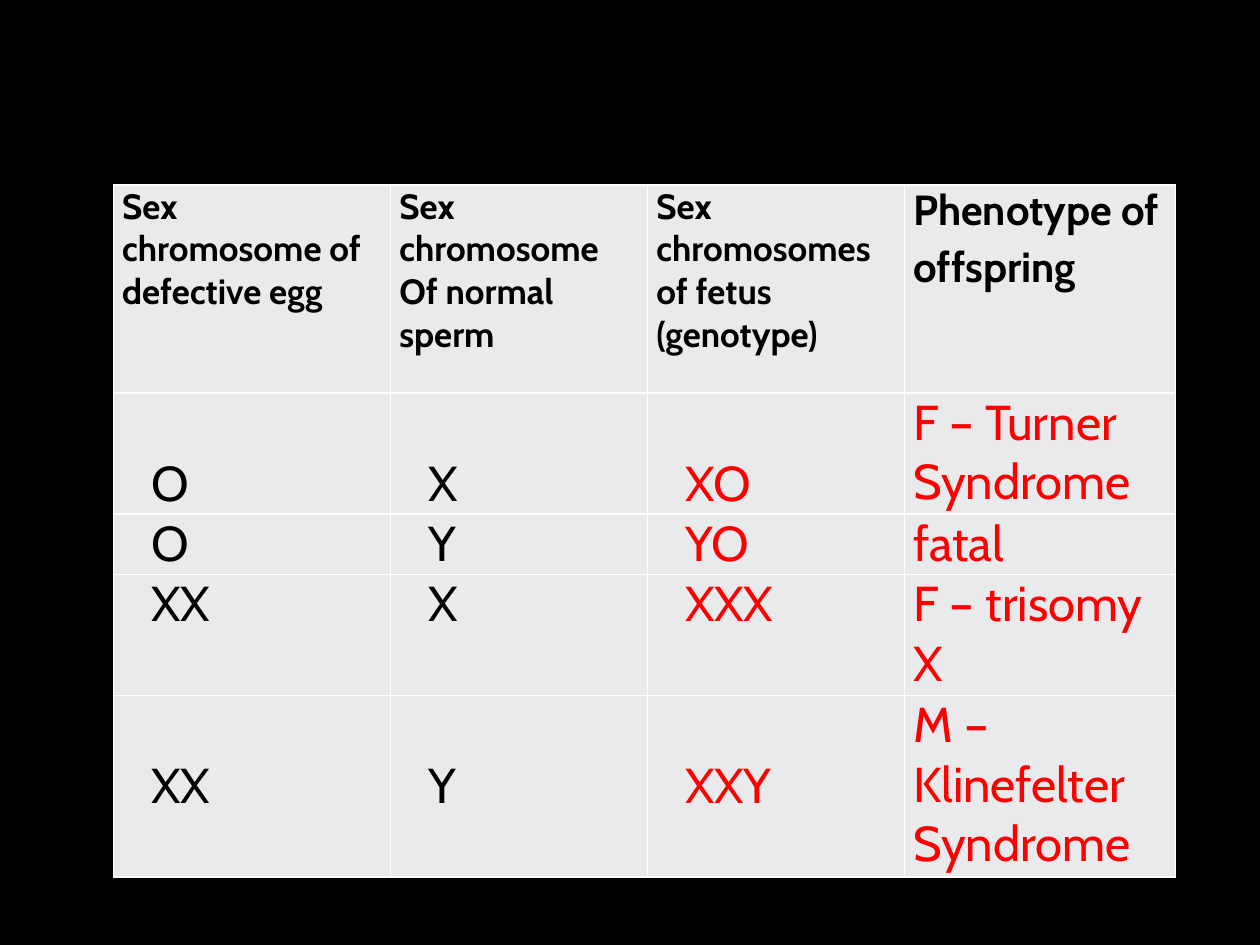
from lxml.etree import SubElement
from pptx import Presentation
from pptx.dml.color import RGBColor as Color
from pptx.enum.text import MSO_ANCHOR as Anchor
from pptx.oxml.ns import qn
from pptx.util import Inches, Pt

COLORS = {"back": "000000", "cell": "E9EAEC", "border": "FFFFFF",
          "given": "000000", "result": "FF0000"}
HEADERS = [
    ("Sex chromosome of\ndefective egg", 20),
    ("Sex chromosome Of normal sperm", 20),
    ("Sex chromosomes of fetus (genotype)", 20),
    ("Phenotype of\noffspring", 24),
]
CROSSES = [
    (("O", "X", "XO", "F – Turner Syndrome"), Anchor.BOTTOM),
    (("O", "Y", "YO", "fatal"), Anchor.TOP),
    (("XX", "X", "XXX", "F – trisomy X"), Anchor.TOP),
    (("XX", "Y", "XXY", "M –Klinefelter Syndrome"), Anchor.MIDDLE),
]
COLUMN_WIDTHS = [22, 20.4, 20.4, 21.5]
ROW_HEIGHTS = [16.5, 9.6, 4.8, 9.6, 14.4]


class SlideBuilder:
    font = "Cabin"
    columns, rows = 100, 75

    def __init__(self, deck):
        self.deck = deck
        self.page = deck.slides.add_slide(deck.slide_layouts[6])

    def across(self, columns):
        return int(self.deck.slide_width * columns / self.columns)

    def down(self, rows):
        return int(self.deck.slide_height * rows / self.rows)

    def background(self, color):
        fill = self.page.background.fill
        fill.solid()
        fill.fore_color.rgb = Color.from_string(COLORS[color])

    def table(self, left, top, widths, heights):
        frame = self.page.shapes.add_table(
            len(heights), len(widths), self.across(left), self.down(top),
            self.across(sum(widths)), self.down(sum(heights)))
        table = frame.table
        table.horz_banding = False
        for column, width in zip(table.columns, widths):
            column.width = self.across(width)
        for row, height in zip(table.rows, heights):
            row.height = self.down(height)
        return table

    def borders(self, cell):
        properties = cell._tc.get_or_add_tcPr()
        for side in ("lnL", "lnR", "lnT", "lnB"):
            line = SubElement(properties, qn(f"a:{side}"), w=str(Pt(1)))
            fill = SubElement(line, qn("a:solidFill"))
            SubElement(fill, qn("a:srgbClr"), val=COLORS["border"])

    def cell(self, cell, text, size, color="given", bold=False,
             anchor=Anchor.TOP, indented=False, gap=0):
        self.borders(cell)
        cell.fill.solid()
        cell.fill.fore_color.rgb = Color.from_string(COLORS["cell"])
        cell.margin_left = cell.margin_right = Inches(0.07)
        cell.margin_top = cell.margin_bottom = 0
        cell.vertical_anchor = anchor
        for index, words in enumerate(text.split("\n")):
            frame = cell.text_frame
            para = frame.add_paragraph() if index else frame.paragraphs[0]
            para.text = words
            para.space_after = Pt(gap)
            if indented:
                properties = para._p.get_or_add_pPr()
                properties.set("marL", str(Inches(0.52)))
                properties.set("indent", str(Inches(-0.29)))
            for span in para.runs:
                span.font.name = self.font
                span.font.size = Pt(size)
                span.font.bold = bold
                span.font.color.rgb = Color.from_string(COLORS[color])


def main():
    deck = Presentation()
    deck.slide_width, deck.slide_height = Inches(10), Inches(7.5)
    slide = SlideBuilder(deck)
    slide.background("back")
    table = slide.table(9, 14.7, COLUMN_WIDTHS, ROW_HEIGHTS)
    for column, (text, size) in enumerate(HEADERS):
        slide.cell(table.cell(0, column), text, size, bold=True,
                   gap=3 if size == 24 else 0)
    for row, (values, anchor) in enumerate(CROSSES, start=1):
        for column, text in enumerate(values):
            is_phenotype = column == 3
            slide.cell(table.cell(row, column), text, 28,
                       color="given" if column < 2 else "result",
                       anchor=Anchor.TOP if is_phenotype else anchor,
                       indented=not is_phenotype)
    deck.save("out.pptx")


if __name__ == "__main__":
    main()
